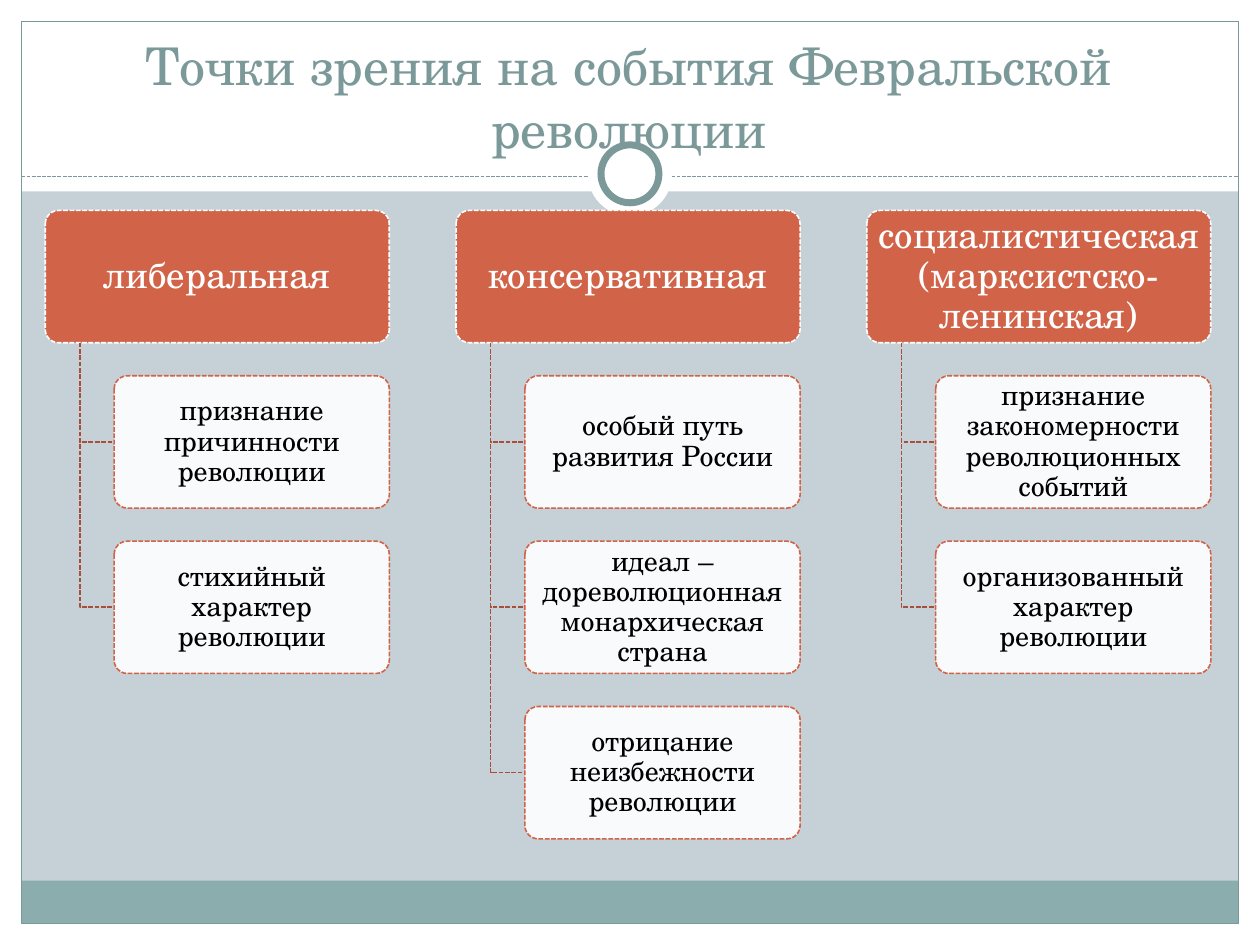
from dataclasses import dataclass

from pptx import Presentation
from pptx import util as u
from pptx.dml.color import RGBColor
from pptx.enum import dml, shapes, text
from pptx.oxml.ns import qn
from lxml import etree


@dataclass(frozen=True)
class Theme:
    font: str = "TeX Gyre Schola"
    backdrop: str = "C5D1D7"
    white: str = "FFFFFF"
    black: str = "000000"
    teal: str = "7C999A"
    band: str = "8CADAE"
    coral: str = "D16349"
    branch: str = "A74F3A"
    title_size: float = 29.7
    head_size: float = 21
    item_size: float = 16
    thin: float = 0.75
    dashed: float = 0.9
    ring: float = 4


THEME = Theme()
TITLE = "Точки зрения на события Февральской революции"
VIEWS = [
    ("либеральная", ["признание причинности революции", "стихийный характер революции"]),
    ("консервативная", ["особый путь развития России",
                        "идеал – дореволюционная монархическая страна",
                        "отрицание неизбежности революции"]),
    ("социалистическая (марксистско-ленинская)",
     ["признание закономерности революционных событий", "организованный характер революции"]),
]


def style_line(line, color, width, dash=False):
    line.color.rgb = RGBColor.from_string(color)
    line.width = u.Pt(width)
    if dash:
        line.dash_style = dml.MSO_LINE.SQUARE_DOT


def add_panel(page, box, kind=shapes.MSO_SHAPE.RECTANGLE, fill=None, alpha=None,
              line=None, width=THEME.thin, dash=False):
    panel = page.shapes.add_shape(kind, *map(u.Inches, box))
    panel.shadow.inherit = False
    if fill:
        panel.fill.solid()
        panel.fill.fore_color.rgb = RGBColor.from_string(fill)
    else:
        panel.fill.background()
    if alpha:
        color = panel.fill._xPr.find(qn("a:solidFill"))[0]
        etree.SubElement(color, qn("a:alpha"), val=str(alpha * 1000))
    if line:
        style_line(panel.line, line, width, dash)
    else:
        panel.line.fill.background()
    return panel


def write_text(shape, words, size, color, anchor=text.MSO_ANCHOR.MIDDLE,
               insets=(0.1, 0.05), spacing=None):
    frame = shape.text_frame
    frame.word_wrap = True
    frame.vertical_anchor = anchor
    frame.margin_left = frame.margin_right = u.Inches(insets[0])
    frame.margin_top = frame.margin_bottom = u.Inches(insets[1])
    para = frame.paragraphs[0]
    para.alignment = text.PP_ALIGN.CENTER
    if spacing:
        para.line_spacing = spacing
    span = para.add_run()
    span.text = words
    span.font.name = THEME.font
    span.font.size = u.Pt(size)
    span.font.color.rgb = RGBColor.from_string(color)


def add_frame(page, box):
    left, top, width, height = box
    right, bottom = left + width, top + height
    page_width, page_height = right + left, bottom + top
    for margin in [(0, bottom, page_width, top), (0, 0, page_width, 1.52),
                   (0, 0, left, page_height), (right, 0, left, page_height)]:
        add_panel(page, margin, fill=THEME.white)
    add_panel(page, (left, bottom - 0.34, width, 0.34), fill=THEME.band)
    add_panel(page, box, line=THEME.teal)

    rule = page.shapes.add_connector(
        shapes.MSO_CONNECTOR.STRAIGHT, *map(u.Inches, (left, 1.4, right, 1.4)))
    style_line(rule.line, THEME.teal, THEME.thin, dash=True)
    etree.SubElement(rule._element.spPr, qn("a:effectLst"))

    center_x, center_y = page_width / 2, 1.38
    for size, line in [(0.67, None), (0.46, THEME.teal)]:
        circle = (center_x - size / 2, center_y - size / 2, size, size)
        add_panel(page, circle, kind=shapes.MSO_SHAPE.OVAL, fill=THEME.white,
                  line=line, width=THEME.ring)


def add_title(page, box, words):
    title = page.shapes.add_textbox(*map(u.Inches, box))
    write_text(title, words, THEME.title_size, THEME.teal, anchor=text.MSO_ANCHOR.BOTTOM)


def add_card(page, box, words, size, color, insets, **look):
    card = add_panel(page, box, kind=shapes.MSO_SHAPE.ROUNDED_RECTANGLE,
                     width=THEME.dashed, dash=True, **look)
    card.adjustments[0] = 0.1
    write_text(card, words, size, color, insets=insets, spacing=0.9)


def add_branch(page, start, end):
    (left, top), (right, bottom) = start, end
    builder = page.shapes.build_freeform(u.Inches(left), u.Inches(top))
    builder.add_line_segments(
        [(u.Inches(left), u.Inches(bottom)), (u.Inches(right), u.Inches(bottom))], close=False)
    branch = builder.convert_to_shape()
    branch.shadow.inherit = False
    branch.fill.background()
    style_line(branch.line, THEME.branch, THEME.dashed, dash=True)


def add_view(page, box, heading, items):
    left, top, width, height = box
    indent, pitch = width / 10, height * 1.25
    add_card(page, box, heading, THEME.head_size, THEME.white, (0.04, 0.03),
             fill=THEME.coral, line=THEME.white)
    item_left = left + 2 * indent
    for row, item in enumerate(items, start=1):
        item_top = top + row * pitch
        add_branch(page, (left + indent, top + height), (item_left, item_top + height / 2))
        add_card(page, (item_left, item_top, width - 2 * indent, height), item,
                 THEME.item_size, THEME.black, (0.03, 0.02),
                 fill=THEME.white, alpha=90, line=THEME.coral)


def main():
    deck = Presentation()
    deck.slide_width, deck.slide_height = u.Inches(10), u.Inches(7.5)
    page = deck.slides.add_slide(deck.slide_layouts[6])
    page.background.fill.solid()
    page.background.fill.fore_color.rgb = RGBColor.from_string(THEME.backdrop)

    add_frame(page, (0.17, 0.17, 9.66, 7.16))
    add_title(page, (0.33, 0.25, 9.33, 1.06), TITLE)
    for column, (heading, items) in enumerate(VIEWS):
        add_view(page, (0.36 + column * 3.26, 1.67, 2.73, 1.05), heading, items)
    deck.save("out.pptx")


if __name__ == "__main__":
    main()
